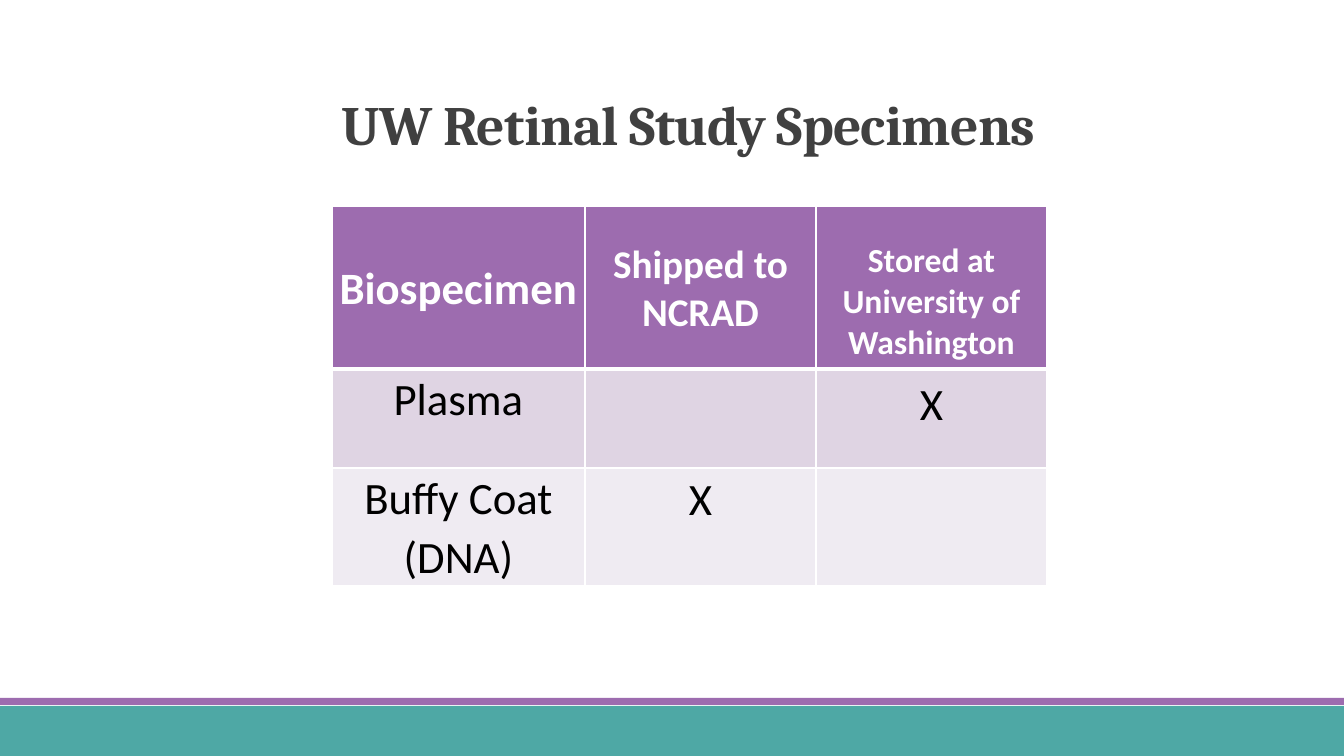
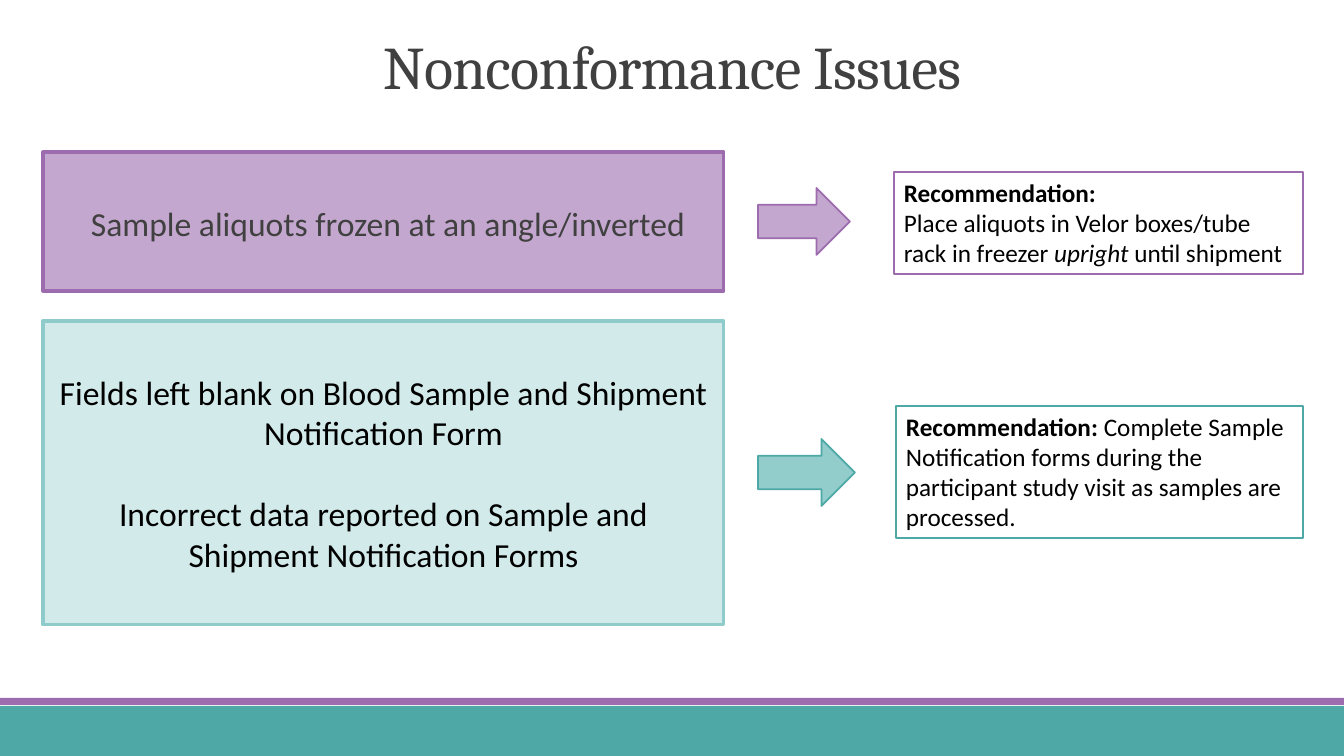
from lxml import etree
from pptx import Presentation
from pptx.dml.color import RGBColor
from pptx.enum.shapes import MSO_SHAPE
from pptx.enum.text import MSO_ANCHOR, MSO_AUTO_SIZE, PP_ALIGN
from pptx.oxml.ns import qn
from pptx.util import Emu, Pt

RECTANGLE, ARROW = MSO_SHAPE.RECTANGLE, MSO_SHAPE.RIGHT_ARROW
LEFT, CENTER = PP_ALIGN.LEFT, PP_ALIGN.CENTER
TOP, MIDDLE, BOTTOM = MSO_ANCHOR.TOP, MSO_ANCHOR.MIDDLE, MSO_ANCHOR.BOTTOM
NO_FIT = MSO_AUTO_SIZE.NONE

WIDTH, HEIGHT = 1344, 756
PURPLE, LILAC = "9D6CAF", "C4A7CF"
TEAL, AQUA, PALE_AQUA, AQUA_EDGE = "4EA8A5", "93CDCB", "D2EAEA", "8FCBCA"
ROW_TINTS = ["DFD4E3", "EFEBF2"]
WHITE, BLACK, GRAY = "FFFFFF", "000000", "404040"
BODY_FONT, TITLE_FONT = "Calibri", "Cambria"


def px(length):
    return Emu(round(length * 914400 / 100.8))


def rgb(value):
    return RGBColor.from_string(value)


class Deck:
    def __init__(self):
        self.presentation = Presentation()
        self.presentation.slide_width = px(WIDTH)
        self.presentation.slide_height = px(HEIGHT)
        self.slide = None

    def add_slide(self, title, box, size, spacing, bold=False):
        layout = self.presentation.slide_layouts.get_by_name("Title Only")
        self.slide = self.presentation.slides.add_slide(layout)
        self.shape(RECTANGLE, (0, 706, WIDTH, 50), TEAL)
        self.shape(RECTANGLE, (0, 698, WIDTH, 7), PURPLE)
        heading = self.slide.shapes.title
        heading.left, heading.top, heading.width, heading.height = map(px, box)
        frame = heading.text_frame
        frame.auto_size = NO_FIT
        frame.vertical_anchor = BOTTOM
        self.set_text(frame, [[title]], size, GRAY, font=TITLE_FONT,
                      spacing=spacing, bold=bold)
        for run in frame.paragraphs[0].runs:
            run._r.get_or_add_rPr().set("spc", "-50")

    def shape(self, preset, box, fill, line=None, weight=1.25):
        shape = self.slide.shapes.add_shape(preset, *map(px, box))
        shape.shadow.inherit = False
        shape.fill.solid()
        shape.fill.fore_color.rgb = rgb(fill)
        if line:
            shape.line.color.rgb = rgb(line)
            shape.line.width = Pt(weight)
        else:
            shape.line.fill.background()
        return shape

    def panel(self, box, fill, line, paragraphs, size=24, color=BLACK,
              weight=2.25, align=CENTER, anchor=MIDDLE, gap=0,
              insets=(10, 5, 10, 5)):
        frame = self.shape(RECTANGLE, box, fill, line, weight).text_frame
        frame.word_wrap = True
        frame.vertical_anchor = anchor
        self.set_insets(frame, insets)
        self.set_text(frame, paragraphs, size, color, align, gap=gap)

    def recommendation(self, box, line, paragraphs):
        self.panel(box, WHITE, line, paragraphs, 18, weight=1.25,
                   align=LEFT, anchor=TOP)

    def set_insets(self, holder, insets):
        (holder.margin_left, holder.margin_top,
         holder.margin_right, holder.margin_bottom) = map(px, insets)

    def set_text(self, frame, paragraphs, size, color, align=CENTER,
                 font=BODY_FONT, spacing=1.0, bold=None, gap=0):
        for index, runs in enumerate(paragraphs):
            paragraph = frame.add_paragraph() if index else frame.paragraphs[0]
            paragraph.alignment = align
            paragraph.line_spacing = spacing
            if index and gap:
                paragraph.space_before = Pt(gap)
            paragraph.font.name = font
            paragraph.font.size = Pt(size)
            paragraph.font.color.rgb = rgb(color)
            paragraph.font.bold = bold
            for item in runs:
                text, style = (item, "") if isinstance(item, str) else item
                run = paragraph.add_run()
                run.text = text
                if style == "bold":
                    run.font.bold = True
                elif style == "italic":
                    run.font.italic = True

    def table(self, left, top, columns, rows):
        box = (left, top, sum(columns), sum(rows))
        table = self.slide.shapes.add_table(
            len(rows), len(columns), *map(px, box)).table
        table.horz_banding = False
        for column, width in zip(table.columns, columns):
            column.width = px(width)
        for row, height in zip(table.rows, rows):
            row.height = px(height)
        return table

    def cell(self, cell, text, fill, size=32, color=BLACK, bold=False,
             spacing=1.07, anchor=TOP, insets=(7, 0, 7, 0), rule=1):
        for side, weight in (("L", 1), ("R", 1), ("T", 1), ("B", rule)):
            border = etree.SubElement(cell._tc.get_or_add_tcPr(),
                                      qn("a:ln" + side), w=str(Pt(weight)))
            paint = etree.SubElement(border, qn("a:solidFill"))
            etree.SubElement(paint, qn("a:srgbClr"), val=WHITE)
        cell.fill.solid()
        cell.fill.fore_color.rgb = rgb(fill)
        cell.vertical_anchor = anchor
        self.set_insets(cell, insets)
        if text:
            self.set_text(cell.text_frame, [[text]], size, color,
                          spacing=spacing, bold=bold)


def specimens_slide(deck):
    deck.add_slide("UW Retinal Study Specimens", (252, 78, 873, 83),
                   39.6, 0.75, bold=True)
    table = deck.table(332, 206, [253, 231, 231], [163, 99, 117])
    headers = [
        ("Biospecimen", 32, 1.07, MIDDLE, (5, 0, 5, 0)),
        ("Shipped to NCRAD", 28, 1.0, TOP, (10, 35, 10, 0)),
        ("Stored at University of Washington", 24, 1.0, TOP, (10, 35, 10, 0)),
    ]
    for column, (text, size, spacing, anchor, insets) in enumerate(headers):
        deck.cell(table.cell(0, column), text, PURPLE, size, WHITE, True,
                  spacing, anchor, insets, rule=3)
    specimens = [("Plasma", "", "X"), ("Buffy Coat (DNA)", "X", "")]
    for row, (values, tint) in enumerate(zip(specimens, ROW_TINTS), 1):
        for column, value in enumerate(values):
            insets = (10, 5, 10, 5) if column else (7, 0, 7, 0)
            deck.cell(table.cell(row, column), value, tint, insets=insets,
                      spacing=1.0 if column and row == 2 else 1.07)


def nonconformance_slide(deck):
    deck.add_slide("Nonconformance Issues", (0, 30, WIDTH, 77), 43.2, 0.85)
    deck.panel((43, 152, 681, 139), LILAC, PURPLE,
               [["Sample aliquots frozen at an angle/inverted"]],
               color=GRAY, insets=(19, 9, 10, 5))
    deck.panel((43, 321, 681, 304), PALE_AQUA, AQUA_EDGE, [
        ["Fields left blank on Blood Sample and Shipment Notification Form"],
        ["Incorrect data reported on Sample and Shipment Notification Forms"],
    ], gap=29)
    deck.shape(ARROW, (758, 188, 92, 67), LILAC, PURPLE)
    deck.shape(ARROW, (758, 439, 97, 67), AQUA, TEAL)
    deck.recommendation((894, 172, 409, 102), PURPLE, [
        [("Recommendation:", "bold")],
        ["Place aliquots in Velor boxes/tube rack in freezer ",
         ("upright", "italic"), " until shipment"],
    ])
    deck.recommendation((896, 406, 407, 132), TEAL, [
        [("Recommendation: ", "bold"),
         "Complete Sample Notification forms during the participant study "
         "visit as samples are processed."],
    ])


def main():
    deck = Deck()
    specimens_slide(deck)
    nonconformance_slide(deck)
    deck.presentation.save("out.pptx")


if __name__ == "__main__":
    main()
